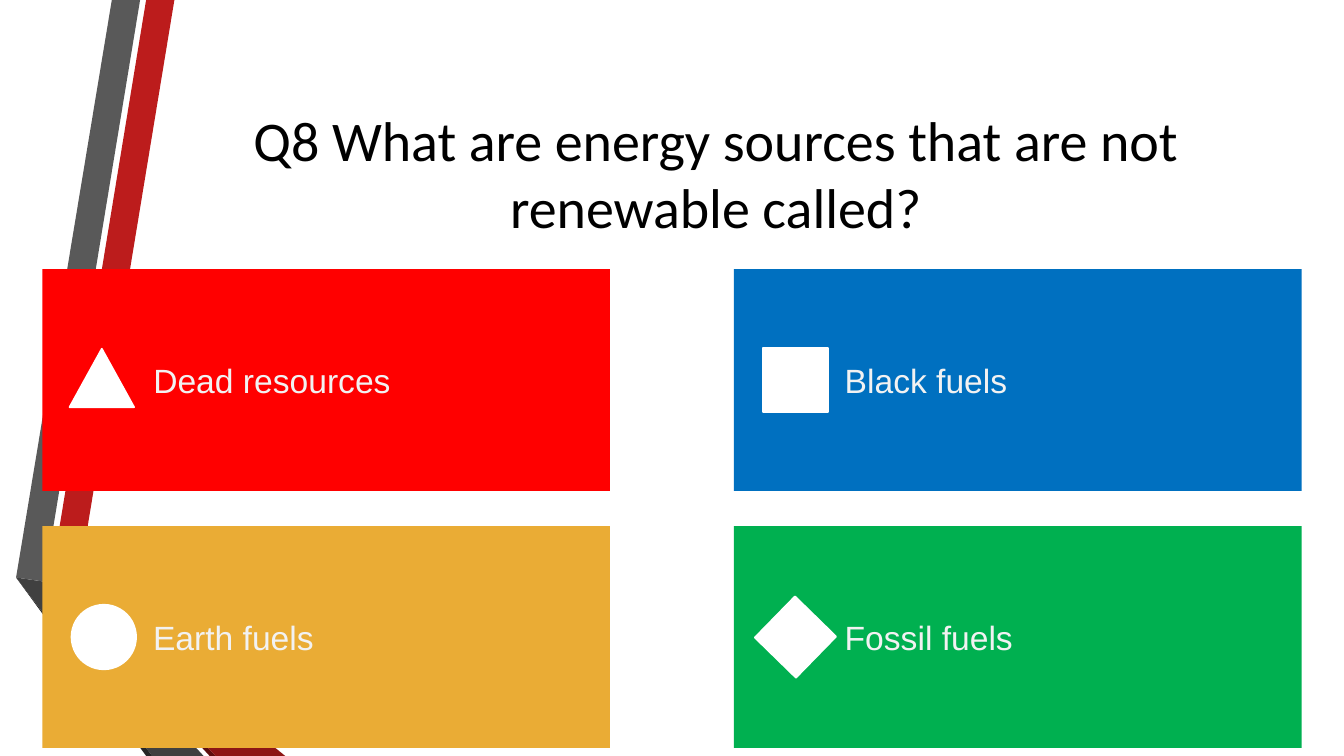
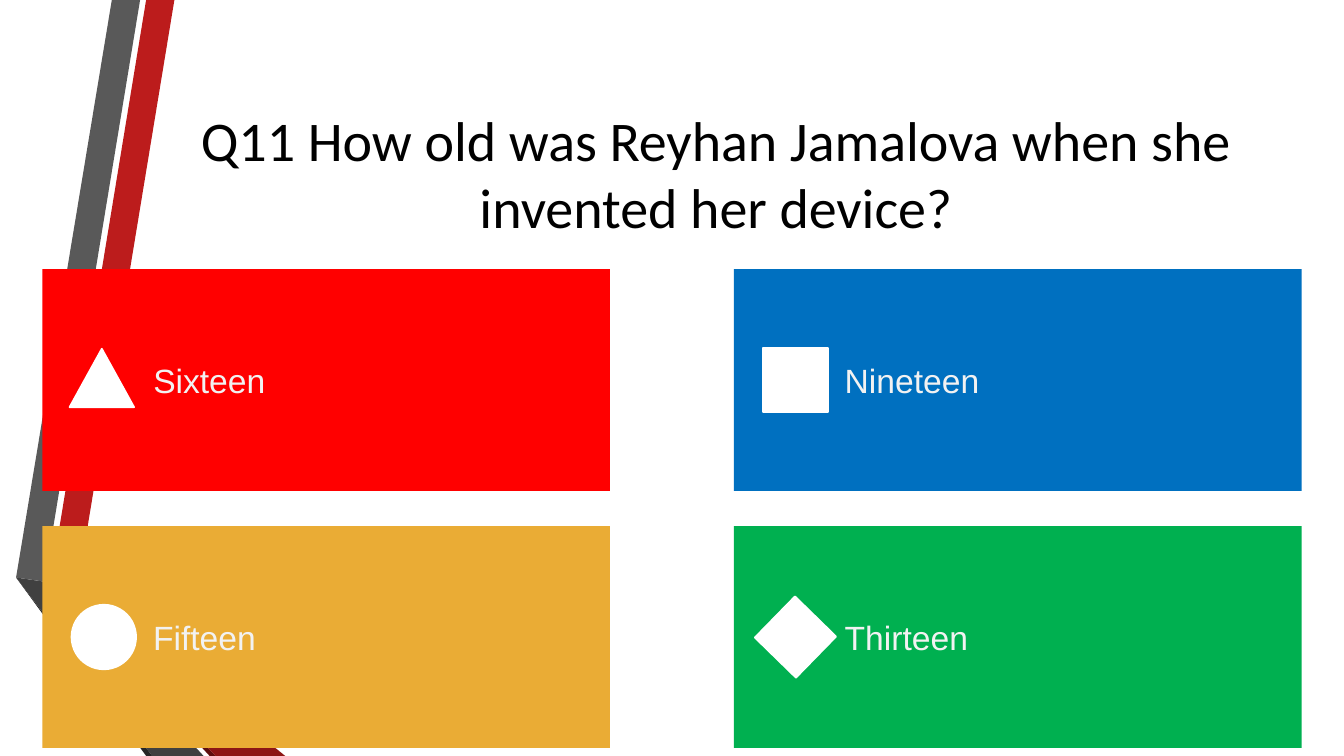
"""Build two quiz slides with four coloured answer panels each."""
from dataclasses import dataclass
from typing import NamedTuple

from lxml.etree import SubElement
from pptx import Presentation
from pptx.dml.color import RGBColor as Rgb
from pptx.enum.shapes import MSO_SHAPE as Kind
from pptx.enum.text import MSO_ANCHOR as Anchor, MSO_AUTO_SIZE as Fit, PP_ALIGN as Align
from pptx.oxml.ns import qn
from pptx.util import Inches, Pt


@dataclass(frozen=True)
class Theme:
    ink: str = "000000"
    pale: str = "F2F2F2"
    white: str = "FFFFFF"
    red: str = "FF0000"
    blue: str = "0070C0"
    gold: str = "EAAC35"
    green: str = "00B050"
    head: str = "Calibri"
    body: str = "Arial"
    big: int = 40
    mid: int = 24
    edge: float = 1.25


THEME = Theme()


class Box(NamedTuple):
    x: float
    y: float
    w: float
    h: float


class Band(NamedTuple):
    color: str
    points: list[tuple[float, float]]


class Panel(NamedTuple):
    color: str
    mark: Kind
    wide: float
    high: float
    turn: float = 0
    x: float = 0.61
    y: float = 1.1


class Quiz(NamedTuple):
    title: str
    answers: list[str]


HEAD = Box(1.62, 0.75, 10.96, 1.92)
GRID = Box(0.42, 2.67, 5.63, 2.2)
STEP_X, STEP_Y = 6.86, 2.55

BANDS = [
    Band("BC1C1C", [(0.5, 5.78), (0.77, 5.83), (1.73, 0), (1.45, 0)]),
    Band("595959", [(1.39, 0), (1.11, 0), (0.16, 5.73), (0.44, 5.77)]),
    Band("262626", [(0.16, 5.73), (1.45, 7.5), (1.51, 7.5)]),
    Band("5E0E0E", [(0.5, 5.79), (2.08, 7.5), (2.14, 7.5)]),
    Band("8D1515", [(0.5, 5.79), (2.14, 7.5), (2.83, 7.5), (0.77, 5.83), (0.5, 5.78)]),
    Band("404040", [(2.02, 7.5), (0.48, 5.83), (0.43, 5.77), (0.16, 5.73), (1.51, 7.5)]),
]

PANELS = [
    Panel(THEME.red, Kind.ISOSCELES_TRIANGLE, 0.64, 0.58, x=0.59, y=1.08),
    Panel(THEME.blue, Kind.RECTANGLE, 0.64, 0.64),
    Panel(THEME.gold, Kind.OVAL, 0.64, 0.64),
    Panel(THEME.green, Kind.RECTANGLE, 0.57, 0.57, turn=314.3),
]

QUIZZES = [
    Quiz("Q8 What are energy sources that are not renewable called?",
         ["Dead resources", "Black fuels", "Earth fuels", "Fossil fuels"]),
    Quiz("Q11 How old was Reyhan Jamalova when she invented her device?",
         ["Sixteen", "Nineteen", "Fifteen", "Thirteen"]),
]


def place(shape, box: Box) -> None:
    shape.left, shape.top, shape.width, shape.height = map(Inches, box)


def paint(shape, color: str, edge: float = 0) -> None:
    shape.shadow.inherit = False
    shape.fill.solid()
    shape.fill.fore_color.rgb = Rgb.from_string(color)
    if edge:
        shape.line.color.rgb = Rgb.from_string(color)
        shape.line.width = Pt(edge)
    else:
        shape.line.fill.background()


def write(shape, text: str, font: str, size: int, color: str, align: Align):
    frame = shape.text_frame
    frame.word_wrap = True
    frame.auto_size = Fit.NONE
    frame.vertical_anchor = Anchor.MIDDLE
    para = frame.paragraphs[0]
    para.alignment = align
    run = para.add_run()
    run.text = text
    run.font.name, run.font.size = font, Pt(size)
    run.font.color.rgb = Rgb.from_string(color)
    return para


def answer(shape, text: str) -> None:
    para = write(shape, text, THEME.body, THEME.mid, THEME.pale, Align.LEFT)
    para.level = 2
    para.space_before, para.space_after = Pt(5), Pt(6)
    props = para._p.get_or_add_pPr()
    props.set("marL", str(Inches(1)))
    props.set("indent", "0")
    SubElement(props, qn("a:buNone"))


def draw_panel(slide, spot: int, panel: Panel, text: str) -> None:
    row, col = divmod(spot, 2)
    box = GRID._replace(x=GRID.x + col * STEP_X, y=GRID.y + row * STEP_Y)
    if spot == 0:
        shape = slide.placeholders[1]
        place(shape, box)
    else:
        shape = slide.shapes.add_shape(Kind.RECTANGLE, *map(Inches, box))
    paint(shape, panel.color)
    answer(shape, text)
    spot_box = Box(box.x + panel.x - panel.wide / 2, box.y + panel.y - panel.high / 2,
                   panel.wide, panel.high)
    mark = slide.shapes.add_shape(panel.mark, *map(Inches, spot_box))
    mark.rotation = panel.turn
    paint(mark, THEME.white, THEME.edge)


def draw_quiz(deck, layout, quiz: Quiz):
    slide = deck.slides.add_slide(layout)
    title = slide.shapes.title
    place(title, HEAD)
    write(title, quiz.title, THEME.head, THEME.big, THEME.ink, Align.CENTER)
    for spot, (panel, text) in enumerate(zip(PANELS, quiz.answers)):
        draw_panel(slide, spot, panel, text)
    return slide


def move_bands(slide, layout) -> None:
    for band in BANDS:
        first, *rest = [(Inches(x), Inches(y)) for x, y in band.points]
        pen = slide.shapes.build_freeform(*first)
        pen.add_line_segments(rest, close=True)
        shape = pen.convert_to_shape()
        paint(shape, band.color)
        layout.shapes.element.append(shape.element)


def main() -> None:
    deck = Presentation()
    deck.slide_width, deck.slide_height = Inches(13.33), Inches(7.5)
    layout = deck.slide_layouts[1]
    slides = [draw_quiz(deck, layout, quiz) for quiz in QUIZZES]
    move_bands(slides[0], layout)
    deck.save("out.pptx")


if __name__ == "__main__":
    main()
